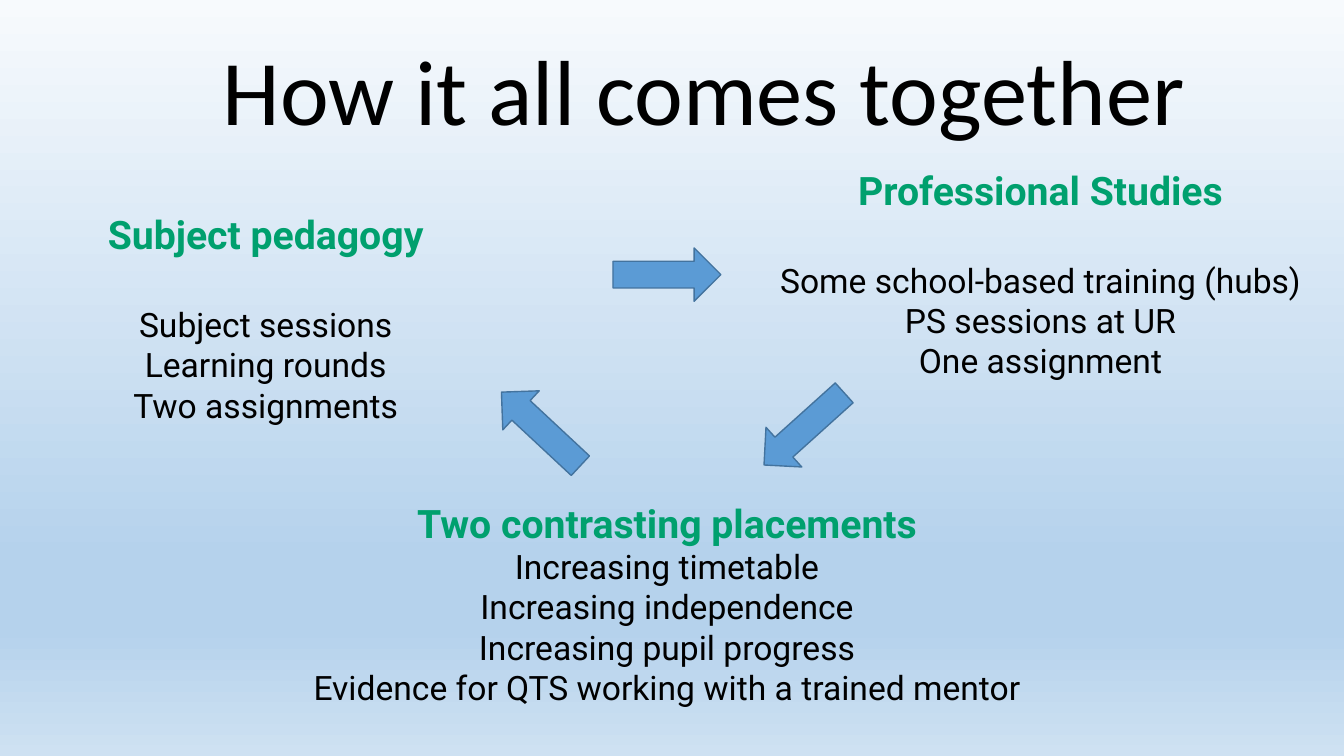
from lxml import etree
from pptx import Presentation
from pptx.dml.color import RGBColor
from pptx.enum.shapes import MSO_SHAPE as Preset
from pptx.enum.text import MSO_ANCHOR as Anchor, MSO_AUTO_SIZE as AutoSize, PP_ALIGN as Align
from pptx.oxml.ns import qn
from pptx.util import Inches, Pt

COLOURS = {"heading": "00A06E", "text": "000000", "arrow": "5B9BD5", "outline": "43739E"}
BACKGROUND_STOPS = [(0, "F7FAFD"), (74, "B5D2EC"), (83, "B5D2EC"), (100, "CEE1F2")]

TITLE_BOX = (2.11, 0.28, 10.62, 1.21)
TOPICS = [
    ((0.41, 2.04, 4.45, 2.86), 33, "Subject pedagogy",
     ["Subject sessions", "Learning rounds", "Two assignments"]),
    ((7.4, 1.6, 5.84, 2.26), 33, "Professional Studies",
     ["Some school-based training (hubs)", "PS sessions at UR", "One assignment"]),
    ((2.74, 4.9, 7.75, 2.19), 0, "Two contrasting placements",
     ["Increasing timetable", "Increasing independence", "Increasing pupil progress",
      "Evidence for QTS working with a trained mentor"]),
]
ARROW_SIZE = (1.07, 0.53)
ARROWS = [(6.08, 2.46, 0), (7.44, 3.99, 138), (4.83, 3.99, 223)]


def paint_background(slide):
    """Fill the slide with a vertical gradient."""
    fill = slide.background.fill
    fill.gradient()
    fill.gradient_angle = 270
    stop_list = next(slide.background._cSld.iter(qn("a:gsLst")))
    for stop in list(stop_list):
        stop_list.remove(stop)
    for position, colour in BACKGROUND_STOPS:
        stop = etree.SubElement(stop_list, qn("a:gs"), pos=str(position * 1000))
        etree.SubElement(stop, qn("a:srgbClr"), val=colour)


def write(paragraph, text, size, font="Roboto", colour="text", bold=False,
          align=Align.CENTER, before=0):
    """Put formatted text into a paragraph."""
    paragraph.text = text
    paragraph.alignment = align
    if before:
        paragraph.space_before = Pt(before)
    paragraph.font.name = font
    paragraph.font.size = Pt(size)
    paragraph.font.bold = bold
    paragraph.font.color.rgb = RGBColor.from_string(COLOURS[colour])


def set_frame(frame):
    """Wrap the text from the top and let the box grow with it."""
    frame.word_wrap = True
    frame.auto_size = AutoSize.SHAPE_TO_FIT_TEXT
    frame.vertical_anchor = Anchor.TOP


def add_title(slide, box):
    """Place and format the title placeholder."""
    title = slide.shapes.title
    title.left, title.top, title.width, title.height = map(Inches, box)
    set_frame(title.text_frame)
    write(title.text_frame.paragraphs[0], "How it all comes together", 66,
          font="Calibri", align=Align.LEFT)


def add_topic(slide, box, gap, heading, items):
    """Add a heading with its centred lines below."""
    frame = slide.shapes.add_textbox(*map(Inches, box)).text_frame
    set_frame(frame)
    write(frame.paragraphs[0], heading, 28, colour="heading", bold=True)
    for index, item in enumerate(items):
        write(frame.add_paragraph(), item, 24, before=0 if index else gap)


def add_arrow(slide, left, top, rotation):
    """Add one block arrow of the cycle."""
    arrow = slide.shapes.add_shape(Preset.RIGHT_ARROW, *map(Inches, (left, top, *ARROW_SIZE)))
    arrow.rotation = rotation
    arrow.shadow.inherit = False
    arrow.fill.solid()
    arrow.fill.fore_color.rgb = RGBColor.from_string(COLOURS["arrow"])
    arrow.line.color.rgb = RGBColor.from_string(COLOURS["outline"])
    arrow.line.width = Pt(1)


def main():
    """Build the slide and save it."""
    presentation = Presentation()
    presentation.slide_width, presentation.slide_height = Inches(13.33), Inches(7.5)
    slide = presentation.slides.add_slide(presentation.slide_layouts.get_by_name("Title Only"))
    paint_background(slide)
    add_title(slide, TITLE_BOX)
    for topic in TOPICS:
        add_topic(slide, *topic)
    for arrow in ARROWS:
        add_arrow(slide, *arrow)
    presentation.save("out.pptx")


if __name__ == "__main__":
    main()
